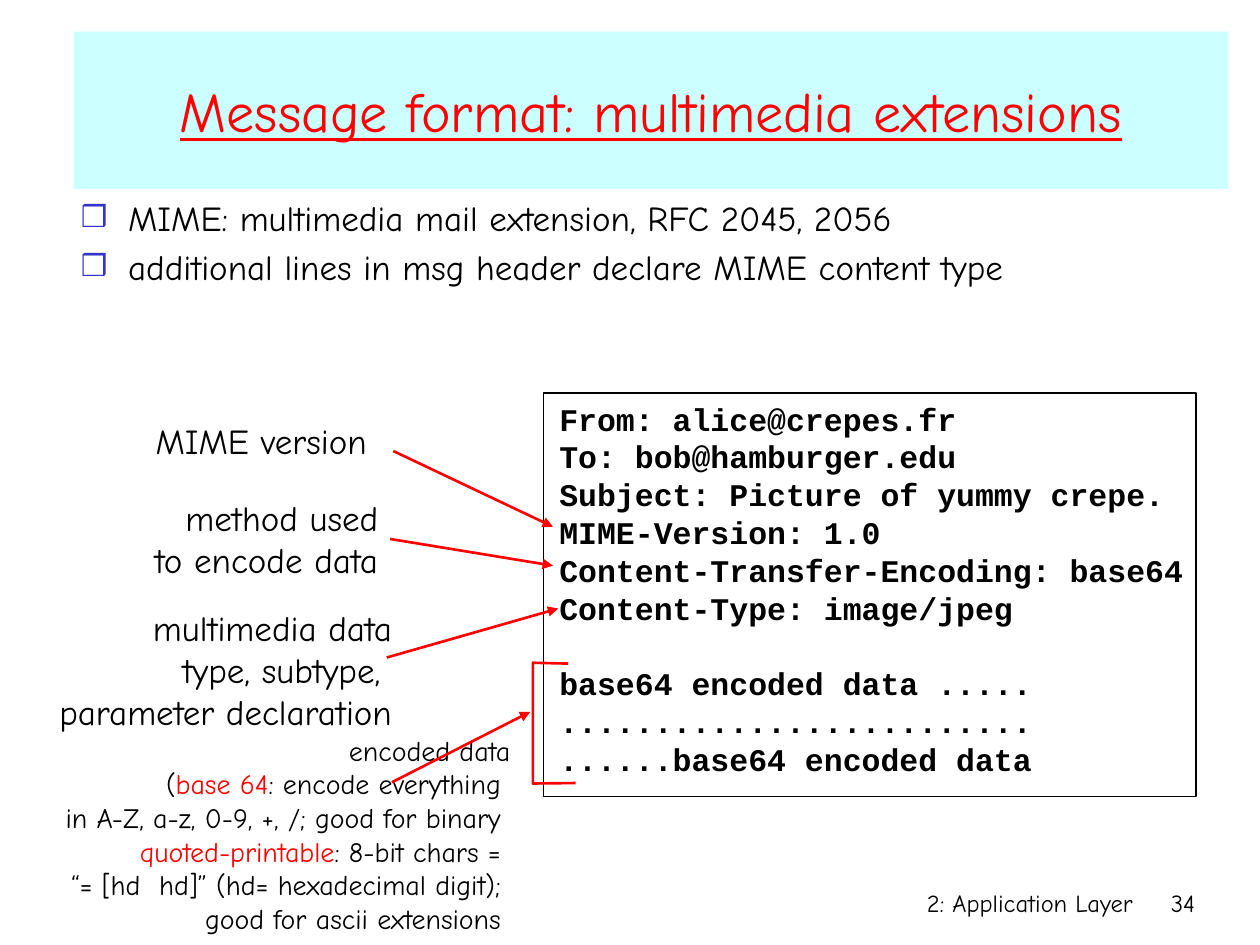
"""Build the slide on multimedia extensions of the mail message format."""
from dataclasses import dataclass

from lxml import etree
from pptx import Presentation
from pptx.dml.color import RGBColor
from pptx.enum.shapes import MSO_CONNECTOR, MSO_SHAPE
from pptx.enum.text import MSO_ANCHOR, MSO_AUTO_SIZE, PP_ALIGN
from pptx.oxml.ns import qn
from pptx.util import Pt

LEFT, CENTER, RIGHT = PP_ALIGN.LEFT, PP_ALIGN.CENTER, PP_ALIGN.RIGHT
TOP, MIDDLE = MSO_ANCHOR.TOP, MSO_ANCHOR.MIDDLE
NO_AUTOFIT = MSO_AUTO_SIZE.NONE
RECTANGLE, STRAIGHT = MSO_SHAPE.RECTANGLE, MSO_CONNECTOR.STRAIGHT

COLORS = {"black": "000000", "red": "FF0000", "banner": "CCFFFF", "bullet": "3333CC"}
HAND, MONO = "Comic Neue", "Courier New"


@dataclass(frozen=True)
class Span:
    text: str
    color: str = "black"


@dataclass(frozen=True)
class Area:
    left: float
    top: float
    width: float
    height: float

    def lengths(self) -> tuple:
        return tuple(Pt(v) for v in (self.left, self.top, self.width, self.height))


@dataclass(frozen=True)
class Label:
    area: Area
    lines: tuple
    size: float = 20
    align: PP_ALIGN = RIGHT
    wrap: bool = False
    font: str = HAND
    bold: bool = False


@dataclass(frozen=True)
class Arrow:
    start: tuple
    end: tuple


def plain(*texts: str) -> tuple:
    return tuple((Span(text),) for text in texts)


def color(name: str) -> RGBColor:
    return RGBColor.from_string(COLORS[name])


def set_all(target, values: dict) -> None:
    for name, value in values.items():
        setattr(target, name, value)


def write(frame, lines: tuple, align: PP_ALIGN, font: dict) -> None:
    for index, line in enumerate(lines):
        para = frame.paragraphs[0] if index == 0 else frame.add_paragraph()
        para.alignment = align
        for span in line:
            run = para.add_run()
            run.text = span.text
            set_all(run.font, font)
            run.font.color.rgb = color(span.color)


def place(shape, area: Area) -> None:
    names = ("left", "top", "width", "height")
    set_all(shape, dict(zip(names, area.lengths())))


def add_label(page, label: Label):
    box = page.shapes.add_textbox(*label.area.lengths())
    set_all(box.text_frame, {"word_wrap": label.wrap, "auto_size": NO_AUTOFIT})
    font = {"name": label.font, "size": Pt(label.size), "bold": label.bold}
    write(box.text_frame, label.lines, label.align, font)
    return box


def style_line(line, name: str, width: float) -> None:
    line.color.rgb = color(name)
    line.width = Pt(width)


def add_arrow(page, arrow: Arrow) -> None:
    ends = [Pt(v) for v in (*arrow.start, *arrow.end)]
    connector = page.shapes.add_connector(STRAIGHT, *ends)
    style_line(connector.line, "red", 1.5)
    etree.SubElement(connector.line._get_or_add_ln(), qn("a:tailEnd"), type="triangle")
    etree.SubElement(connector._element.spPr, qn("a:effectLst"))


def add_bullet(para) -> None:
    para.space_before = Pt(4)
    props = para._p.get_or_add_pPr()
    props.set("marL", str(Pt(27)))
    props.set("indent", str(Pt(-27)))
    tint = etree.SubElement(props, qn("a:buClr"))
    etree.SubElement(tint, qn("a:srgbClr"), val=COLORS["bullet"])
    etree.SubElement(props, qn("a:buSzPct"), val="85000")
    etree.SubElement(props, qn("a:buChar"), char="❒")


def fill_placeholders(page) -> None:
    title, body = page.placeholders[0], page.placeholders[1]
    place(title, Area(42, 18, 660, 90))
    title.fill.solid()
    title.fill.fore_color.rgb = color("banner")
    set_all(title.text_frame, {"vertical_anchor": MIDDLE, "auto_size": NO_AUTOFIT})
    heading = ((Span("Message format: multimedia extensions", "red"),),)
    write(title.text_frame, heading, CENTER,
          {"name": HAND, "size": Pt(32), "underline": True})

    place(body, Area(39, 108.75, 577, 366))
    set_all(body.text_frame, {"vertical_anchor": TOP, "auto_size": NO_AUTOFIT})
    points = plain("MIME: multimedia mail extension, RFC 2045, 2056",
                   "additional lines in msg header declare MIME content type")
    write(body.text_frame, points, LEFT, {"name": HAND, "size": Pt(20)})
    for para in body.text_frame.paragraphs:
        add_bullet(para)


def add_message(page) -> None:
    header = plain("From: alice@crepes.fr", "To: bob@hamburger.edu",
                   "Subject: Picture of yummy crepe.", "MIME-Version: 1.0",
                   "Content-Transfer-Encoding: base64", "Content-Type: image/jpeg")
    content = plain("base64 encoded data .....", "." * 25,
                    "......base64 encoded data")
    text = add_label(page, Label(Area(312.5, 224.75, 392, 245), header + content,
                                 18, LEFT, True, MONO, True))
    text.text_frame.paragraphs[len(header)].space_before = Pt(21.6)

    border = page.shapes.add_shape(RECTANGLE, *Area(310.5, 224.75, 373, 230.5).lengths())
    border.shadow.inherit = False
    border.fill.background()
    style_line(border.line, "black", 1)


def add_bracket(page) -> None:
    points = [(324.75, 379.25), (304.5, 378.75), (304.5, 447.75), (329, 447.5)]
    corners = [(Pt(x), Pt(y)) for x, y in points]
    builder = page.shapes.build_freeform(*corners[0])
    builder.add_line_segments(corners[1:], close=False)
    bracket = builder.convert_to_shape()
    bracket.shadow.inherit = False
    bracket.fill.background()
    style_line(bracket.line, "red", 1.5)


LABELS = (
    Label(Area(426, 504, 228.5, 36), plain("2: Application Layer"), 14, wrap=True),
    Label(Area(654, 504, 36, 36), plain("34"), 14, wrap=True),
    Label(Area(8.75, 342.75, 222.5, 79),
          plain("multimedia data", "type, subtype, ", "parameter declaration")),
    Label(Area(70.5, 280, 152.75, 55.5), plain("method used", "to encode data")),
    Label(Area(76.25, 236.25, 146, 31), plain("MIME version"), align=CENTER),
    Label(Area(-49, 415.5, 347.75, 122.5), (
        (Span("encoded data"),),
        (Span("("), Span("base 64", "red"), Span(": encode everything ")),
        (Span("in A-Z, a-z, 0-9, +, /; good for binary "),),
        (Span("quoted-printable", "red"), Span(": 8-bit chars = ")),
        (Span("“= [hd  hd]” (hd= hexadecimal digit); "),),
        (Span("good for ascii extensions "),),
    ), 16, wrap=True),
)
ARROWS = (
    Arrow((224.75, 257.75), (316, 301)),
    Arrow((223, 308), (316, 323.25)),
    Arrow((221, 375.75), (319, 347.75)),
    Arrow((224, 447), (303, 406.75)),
)


def main() -> None:
    deck = Presentation()
    set_all(deck, {"slide_width": Pt(720), "slide_height": Pt(540)})
    page = deck.slides.add_slide(deck.slide_layouts[1])
    fill_placeholders(page)
    add_message(page)
    for label in LABELS:
        add_label(page, label)
    for arrow in ARROWS:
        add_arrow(page, arrow)
    add_bracket(page)
    deck.save("out.pptx")


if __name__ == "__main__":
    main()
